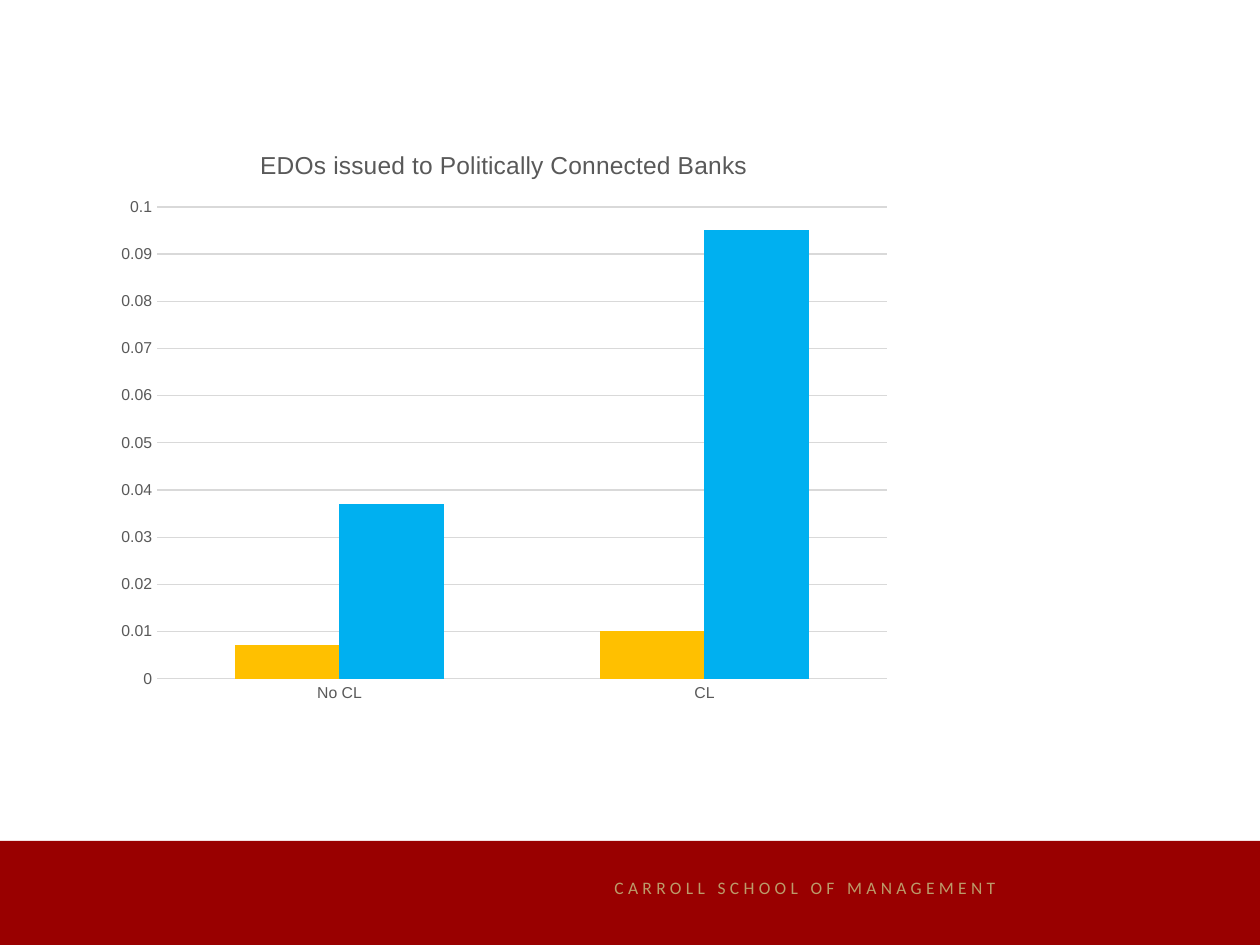
from typing import NamedTuple

from pptx import Presentation
from pptx.chart.data import CategoryChartData
from pptx.dml.color import RGBColor
from pptx.enum.chart import XL_CHART_TYPE, XL_TICK_MARK
from pptx.enum.shapes import MSO_SHAPE
from pptx.enum.text import MSO_AUTO_SIZE
from pptx.oxml import parse_xml
from pptx.oxml.ns import nsdecls
from pptx.util import Emu, Pt

RED = RGBColor(0x99, 0x00, 0x00)
TAN = RGBColor(0xBC, 0x9B, 0x6A)
GRAY = RGBColor(0x59, 0x59, 0x59)
GRID = RGBColor(0xD9, 0xD9, 0xD9)
GOLD = RGBColor(0xFF, 0xC0, 0x00)
BLUE = RGBColor(0x00, 0xB0, 0xF0)
DPI = 126


class Box(NamedTuple):
    left: int
    top: int
    width: int
    height: int

    def emu(self) -> list[Emu]:
        return [px(v) for v in self]


class Bars(NamedTuple):
    name: str
    values: tuple[float, ...]
    color: RGBColor


PAGE = Box(0, 0, 1260, 945)
BAND = Box(0, 841, 1260, 104)
LABEL = Box(602, 871, 445, 34)
CHART = Box(105, 126, 798, 588)
PLOT = Box(157, 207, 730, 472)

CATS = ("No CL", "CL")
BARS = (
    Bars("Series 1", (0.007, 0.01), GOLD),
    Bars("Series 2", (0.037, 0.095), BLUE),
)


def px(n: int) -> Emu:
    return Emu(round(n * 914400 / DPI))


def set_font(font, *, size: int, color: RGBColor, face: str = "Arial") -> None:
    font.size = Pt(size)
    font.name = face
    font.bold = False
    font.color.rgb = color


def put_text(frame, text: str, *, size: int, color: RGBColor,
             face: str = "Arial", gap: float = 0) -> None:
    run = frame.paragraphs[0].add_run()
    run.text = text
    set_font(run.font, size=size, color=color, face=face)
    if gap:
        run._r.get_or_add_rPr().set("spc", str(round(gap * 100)))


def set_line(line, color: RGBColor) -> None:
    line.color.rgb = color
    line.width = Pt(0.75)


def set_axis(axis) -> None:
    axis.major_tick_mark = axis.minor_tick_mark = XL_TICK_MARK.NONE
    axis.format.line.fill.background()
    set_font(axis.tick_labels.font, size=9, color=GRAY)


def set_plot(chart, outer: Box, inner: Box) -> None:
    """Fix the inner plot area as fractions of the chart frame."""
    parts = {
        "x": (inner.left - outer.left) / outer.width,
        "y": (inner.top - outer.top) / outer.height,
        "w": inner.width / outer.width,
        "h": inner.height / outer.height,
    }
    modes = "".join(f'<c:{k}Mode val="edge"/>' for k in "xy")
    sizes = "".join(f'<c:{k} val="{v:.4f}"/>' for k, v in parts.items())
    area = chart.element.xpath("c:chart/c:plotArea")[0]
    for old in area.xpath("c:layout"):
        area.remove(old)
    area.insert(0, parse_xml(
        f'<c:layout {nsdecls("c")}><c:manualLayout>'
        f'<c:layoutTarget val="inner"/>{modes}{sizes}'
        "</c:manualLayout></c:layout>"))


def add_bars(slide) -> None:
    data = CategoryChartData()
    data.categories = CATS
    for bar in BARS:
        data.add_series(bar.name, bar.values)
    chart = slide.shapes.add_chart(
        XL_CHART_TYPE.COLUMN_CLUSTERED, *CHART.emu(), data).chart
    set_font(chart.font, size=10, color=GRAY)
    chart.has_legend = False

    # Title
    chart.has_title = True
    put_text(chart.chart_title.text_frame,
             "EDOs issued to Politically Connected Banks",
             size=14, color=GRAY)
    chart.chart_title.include_in_layout = False

    # Axes
    set_axis(chart.category_axis)
    axis = chart.value_axis
    set_axis(axis)
    axis.minimum_scale, axis.maximum_scale = 0, 0.1
    axis.major_unit = 0.01
    axis.has_major_gridlines = True
    set_line(axis.major_gridlines.format.line, GRID)

    # Columns
    plot = chart.plots[0]
    plot.gap_width, plot.overlap = 150, 0
    plot.vary_by_categories = False
    for series, bar in zip(plot.series, BARS):
        series.format.fill.solid()
        series.format.fill.fore_color.rgb = bar.color
        set_line(series.format.line, bar.color)
    set_plot(chart, CHART, PLOT)


def add_foot(slide) -> None:
    band = slide.shapes.add_shape(MSO_SHAPE.RECTANGLE, *BAND.emu())
    band.shadow.inherit = False
    band.fill.solid()
    band.fill.fore_color.rgb = RED
    band.line.fill.background()

    frame = slide.shapes.add_textbox(*LABEL.emu()).text_frame
    frame.word_wrap = False
    frame.auto_size = MSO_AUTO_SIZE.SHAPE_TO_FIT_TEXT
    put_text(frame, "CARROLL SCHOOL OF MANAGEMENT",
             size=10, color=TAN, face="Calibri", gap=2.5)


def main() -> None:
    deck = Presentation()
    deck.slide_width, deck.slide_height = px(PAGE.width), px(PAGE.height)
    slide = deck.slides.add_slide(deck.slide_layouts[6])
    add_foot(slide)
    add_bars(slide)
    deck.save("out.pptx")


if __name__ == "__main__":
    main()
